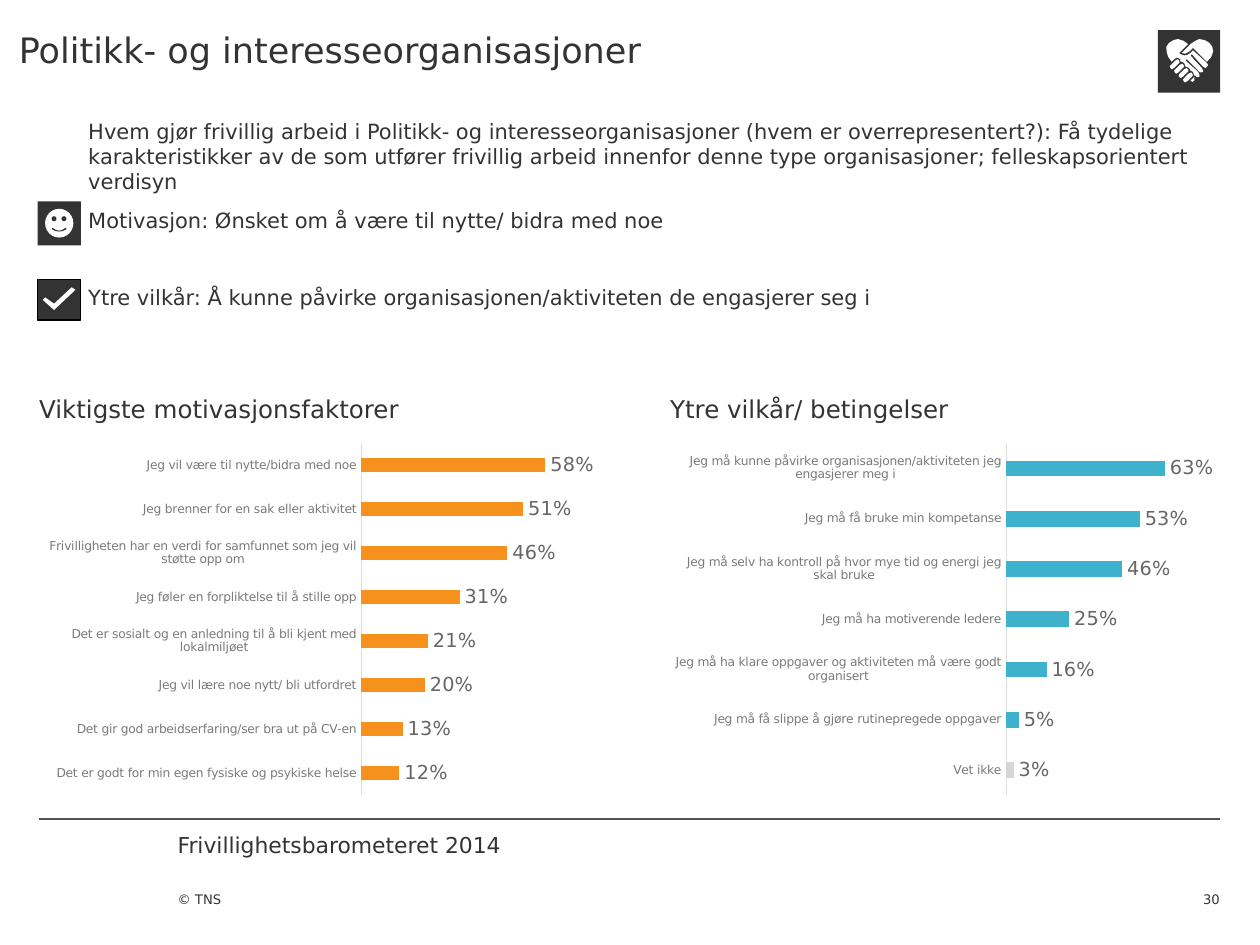
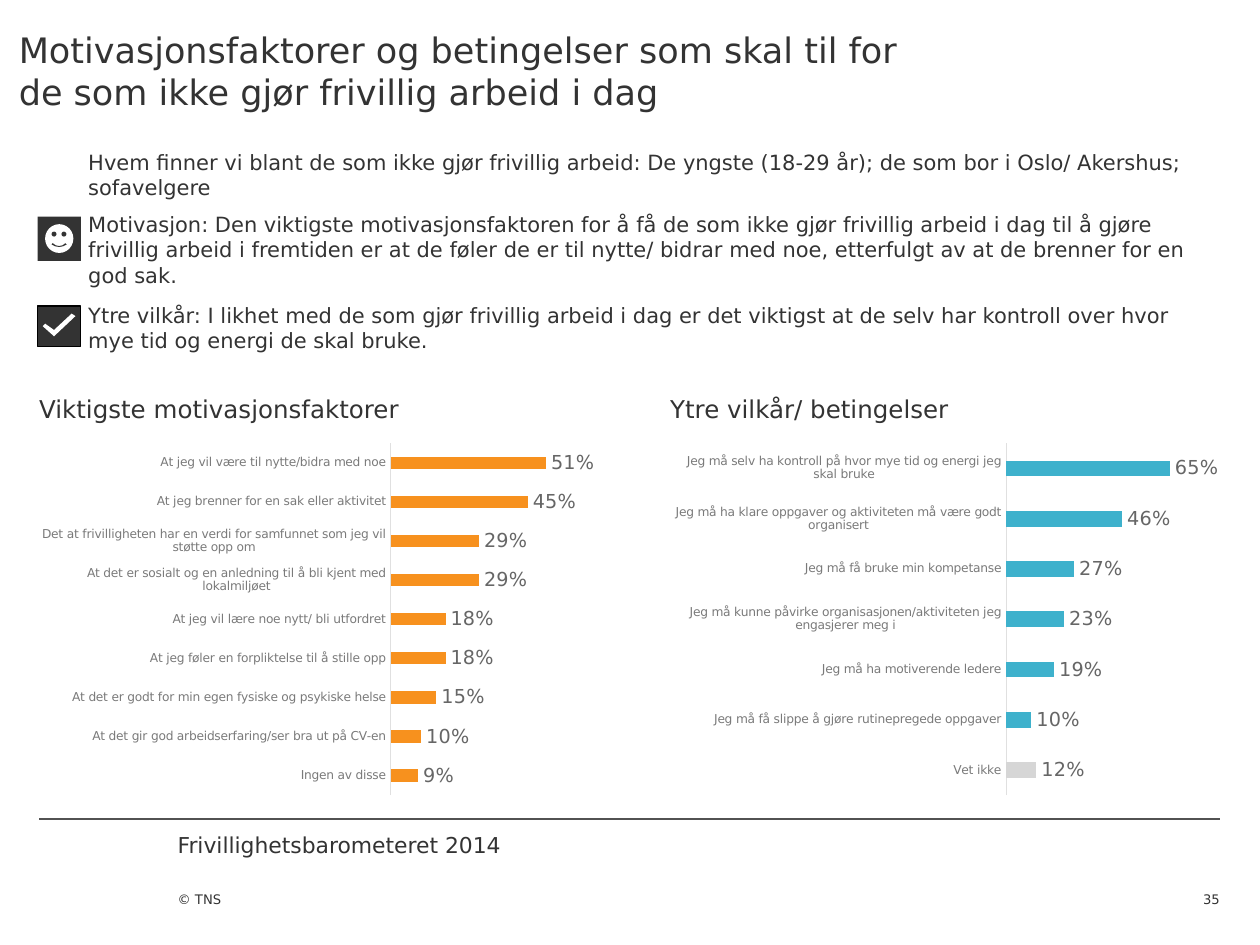
from lxml import etree
from pptx import Presentation
from pptx import util as u
from pptx.chart.data import CategoryChartData
from pptx.dml.color import RGBColor
from pptx.enum import chart as ch, shapes, text
from pptx.oxml import ns

Cm, Pt = u.Cm, u.Pt
FONT = "DejaVu Sans"
HUES = {"ink": "333333", "rule": "525252", "axis": "E0E0E0", "tick": "7A7A7A",
        "label": "666666", "orange": "F7911E", "teal": "3EB1CC",
        "grey": "D6D6D6", "white": "FFFFFF", "black": "000000"}

# Wording shared by several charts
POWER = "Jeg må kunne påvirke organisasjonen/aktiviteten jeg engasjerer meg i"
SKILL = "Jeg må få bruke min kompetanse"
HOLD = "Jeg må selv ha kontroll på hvor mye tid og energi jeg skal bruke"
LEAD = "Jeg må ha motiverende ledere"
TASKS = "Jeg må ha klare oppgaver og aktiviteten må være godt organisert"
DULL = "Jeg må få slippe å gjøre rutinepregede oppgaver"
NONE = "Vet ikke"

HEADS = ["Viktigste motivasjonsfaktorer", "Ytre vilkår/ betingelser"]
SLIDES = [
    {"title": "Politikk- og interesseorganisasjoner",
     "page": "30", "hands": True, "smile": 4.06, "check": 5.64,
     "notes": [
         (2.39, "Hvem gjør frivillig arbeid i Politikk- og interesseorganisasjoner "
                "(hvem er overrepresentert?): Få tydelige karakteristikker av de som "
                "utfører frivillig arbeid innenfor denne type organisasjoner; "
                "felleskapsorientert verdisyn"),
         (4.19, "Motivasjon: Ønsket om å være til nytte/ bidra med noe"),
         (5.74, "Ytre vilkår: Å kunne påvirke organisasjonen/aktiviteten de "
                "engasjerer seg i")],
     "motives": {"max": 0.7, "plot": (0.58, 0.4), "bars": [
         ("Jeg vil være til nytte/bidra med noe", 0.58),
         ("Jeg brenner for en sak eller aktivitet", 0.51),
         ("Frivilligheten har en verdi for samfunnet som jeg vil støtte opp om", 0.46),
         ("Jeg føler en forpliktelse til å stille opp", 0.31),
         ("Det er sosialt og en anledning til å bli kjent med lokalmiljøet", 0.21),
         ("Jeg vil lære noe nytt/ bli utfordret", 0.2),
         ("Det gir god arbeidserfaring/ser bra ut på CV-en", 0.13),
         ("Det er godt for min egen fysiske og psykiske helse", 0.12)]},
     "terms": [(POWER, 0.63), (SKILL, 0.53), (HOLD, 0.46), (LEAD, 0.25),
               (TASKS, 0.16), (DULL, 0.05), (NONE, 0.03)]},
    {"title": "Motivasjonsfaktorer og betingelser som skal til for\v"
              "de som ikke gjør frivillig arbeid i dag",
     "page": "35", "hands": False, "smile": 4.37, "check": 6.17,
     "notes": [
         (3.02, "Hvem finner vi blant de som ikke gjør frivillig arbeid: De yngste "
                "(18-29 år); de som bor i Oslo/ Akershus; sofavelgere"),
         (4.27, "Motivasjon: Den viktigste motivasjonsfaktoren for å få de som ikke "
                "gjør frivillig arbeid i dag til å gjøre frivillig arbeid i fremtiden "
                "er at de føler de er til nytte/ bidrar med noe, etterfulgt av at de "
                "brenner for en god sak."),
         (6.1, "Ytre vilkår: I likhet med de som gjør frivillig arbeid i dag er det "
               "viktigst at de selv har kontroll over hvor mye tid og energi de skal "
               "bruke.")],
     "motives": {"max": 0.6, "plot": (0.635, 0.33), "bars": [
         ("At jeg vil være til nytte/bidra med noe", 0.51),
         ("At jeg brenner for en sak eller aktivitet", 0.45),
         ("Det at frivilligheten har en verdi for samfunnet som jeg vil støtte opp om",
          0.29),
         ("At det er sosialt og en anledning til å bli kjent med lokalmiljøet", 0.29),
         ("At jeg vil lære noe nytt/ bli utfordret", 0.18),
         ("At jeg føler en forpliktelse til å stille opp", 0.18),
         ("At det er godt for min egen fysiske og psykiske helse", 0.15),
         ("At det gir god arbeidserfaring/ser bra ut på CV-en", 0.1),
         ("Ingen av disse", 0.09)]},
     "terms": [(HOLD, 0.65), (TASKS, 0.46), (SKILL, 0.27), (POWER, 0.23),
               (LEAD, 0.19), (DULL, 0.1), (NONE, 0.12)]},
]

# Icon outlines in hundredths of an inch from the tile corner
CHECK = [(27, 6), (13, 19), (6, 14), (4, 16), (13, 24), (30, 8)]
MOUTH = [(11, 22), (12, 21), (14.3, 22.7), (17, 23.3), (19.7, 22.7), (22, 21),
         (23, 22), (20.2, 23.5), (17, 24), (13.8, 23.5)]
FINGER = [(23, 34), (24.4, 32.5), (24, 31), (23, 30), (21, 31), (18, 34),
          (16.6, 35.5), (17, 37), (18, 38), (20, 37)]
RIGHT = [(44, 17), (42.4, 21.4), (39, 25), (28, 14), (25, 17), (21.8, 18.7),
         (19, 18), (26, 11), (29.6, 8.6), (33, 7), (37.4, 7.9), (41, 10),
         (43.3, 13.1)]
LEFT = [(28, 16), (26, 18), (23.5, 19.7), (21, 20), (18, 19), (17, 18), (24, 11),
        (20.4, 8.4), (16, 7), (12.4, 7.9), (9, 10), (6.9, 13), (7, 17), (8.2, 21),
        (11, 25), (13, 23), (14.4, 22.1), (16, 22), (18, 23), (18, 25), (19, 25),
        (21, 26), (22, 29), (23, 29), (25, 30), (26, 32), (28, 33), (29, 36),
        (30, 36), (31, 37.3), (33, 37), (33, 35), (32, 33), (22, 24), (23, 23),
        (33, 33), (34.5, 33.6), (36, 33), (36, 32), (35, 30), (26, 20), (27, 19),
        (36, 29), (38, 30), (39, 29), (40, 28), (39, 26)]
TIP = [(28, 38), (26, 40), (27.5, 41), (29, 40), (29, 39), (29, 37)]
HANDS = [RIGHT, LEFT, TIP] + [[(x + d, y + d) for x, y in FINGER]
                              for d in (-7, -3.5, 0, 3.5)]


def hue(name):
    return RGBColor.from_string(HUES[name])


def style(font, size, color="ink"):
    for key, val in {"name": FONT, "size": Pt(size), "bold": False}.items():
        setattr(font, key, val)
    font.color.rgb = hue(color)


def write(page, words, box, size, inset=0, **form):
    frame = page.shapes.add_textbox(*map(Cm, box)).text_frame
    base = {"word_wrap": True, "margin_left": 0, "margin_right": 0,
            "margin_top": Cm(inset), "margin_bottom": 0,
            "vertical_anchor": form.get("anchor", text.MSO_ANCHOR.TOP)}
    for key, val in base.items():
        setattr(frame, key, val)
    para = frame.paragraphs[0]
    para.text = words
    para.alignment = form.get("align", text.PP_ALIGN.LEFT)
    for run in para.runs:
        style(run.font, size)


def paint(shape, fill, edge=None):
    shape.shadow.inherit = False
    shape.fill.solid()
    shape.fill.fore_color.rgb = hue(fill)
    if edge:
        shape.line.color.rgb = hue(edge)
        shape.line.width = Pt(0.75)
    else:
        shape.line.fill.background()


def put(page, kind, box, fill, edge=None):
    paint(page.shapes.add_shape(kind, *map(Cm, box)), fill, edge)


def trace(page, loops, left, top, fill):
    """Draw closed outlines as one shape, placed from the tile corner."""
    fine = [[(x * 10, y * 10) for x, y in loop] for loop in loops]
    pen = page.shapes.build_freeform(*fine[0][0], scale=Cm(2.54) / 1000)
    for n, loop in enumerate(fine):
        if n:
            pen.move_to(*loop[0])
        pen.add_line_segments(loop[1:], close=True)
    paint(pen.convert_to_shape(Cm(left), Cm(top)), fill)


def smile(page, left, top):
    oval = shapes.MSO_SHAPE.OVAL
    put(page, shapes.MSO_SHAPE.RECTANGLE, (left, top, 0.87, 0.89), "ink")
    put(page, oval, (left + 0.15, top + 0.15, 0.57, 0.58), "white")
    for x in (0.28, 0.48):
        put(page, oval, (left + x, top + 0.3, 0.1, 0.1), "ink")
    trace(page, [MOUTH], left, top, "ink")


def check(page, left, top):
    put(page, shapes.MSO_SHAPE.RECTANGLE, (left, top, 0.87, 0.81), "ink", "black")
    trace(page, [CHECK], left, top, "white")


def hands(page, left, top):
    put(page, shapes.MSO_SHAPE.RECTANGLE, (left, top, 1.26, 1.26), "ink")
    trace(page, HANDS, left, top, "white")


def place(chart, left, width):
    """Fix the inner plot area, in shares of the chart frame."""
    area = chart._chartSpace.chart.plotArea
    for old in area.findall(ns.qn("c:layout")):
        area.remove(old)
    layout = etree.Element(ns.qn("c:layout"))
    manual = etree.SubElement(layout, ns.qn("c:manualLayout"))
    for tag, val in [("layoutTarget", "inner"), ("xMode", "edge"), ("yMode", "edge"),
                     ("x", left), ("y", 0.02), ("w", width), ("h", 0.96)]:
        etree.SubElement(manual, ns.qn("c:" + tag)).set("val", str(val))
    area.insert(0, layout)


def bars(page, rows, left, top, color, plot, grey=False):
    rows = rows[::-1]
    data = CategoryChartData(number_format="0%")
    data.categories = [name for name, _ in rows]
    data.add_series("Series 1", [val for _, val in rows])
    chart = page.shapes.add_chart(ch.XL_CHART_TYPE.BAR_CLUSTERED, Cm(left), Cm(8.79),
                                  Cm(11.2), Cm(7.39), data).chart
    chart.has_legend = chart.has_title = False
    style(chart.font, 10)
    cat, val = chart.category_axis, chart.value_axis
    for key, item in {"major_tick_mark": ch.XL_TICK_MARK.NONE,
                      "has_major_gridlines": False}.items():
        setattr(cat, key, item)
    style(cat.tick_labels.font, 7, "tick")
    cat.format.line.color.rgb = hue("axis")
    cat.format.line.width = Pt(0.75)
    for key, item in {"minimum_scale": 0, "maximum_scale": top, "major_unit": 0.1,
                      "has_major_gridlines": False, "visible": False}.items():
        setattr(val, key, item)
    body = chart.plots[0]
    for key, item in {"gap_width": 219, "vary_by_categories": False,
                      "has_data_labels": True}.items():
        setattr(body, key, item)
    for key, item in {"show_value": True, "number_format": "0%",
                      "number_format_is_linked": False,
                      "position": ch.XL_LABEL_POSITION.OUTSIDE_END}.items():
        setattr(body.data_labels, key, item)
    style(body.data_labels.font, 11, "label")
    line = body.series[0]
    fills = [(line.format.fill, color)]
    if grey:
        fills.append((line.points[0].format.fill, "grey"))
    for fill, name in fills:
        fill.solid()
        fill.fore_color.rgb = hue(name)
    place(chart, *plot)


def frame(page, title, number):
    """Title, footer rule, footer texts and page number."""
    rule = page.shapes.add_connector(shapes.MSO_CONNECTOR.STRAIGHT, Cm(0.79),
                                     Cm(16.51), Cm(24.59), Cm(16.51))
    rule.line.color.rgb = hue("rule")
    rule.line.width = Pt(0.75)
    etree.SubElement(rule._element.spPr, ns.qn("a:effectLst"))
    low = text.MSO_ANCHOR.BOTTOM
    write(page, "Frivillighetsbarometeret 2014", (3.58, 16.76, 8.41, 1.07), 12.5)
    write(page, "© TNS", (3.58, 17.58, 7.06, 0.71), 7.5, anchor=low)
    write(page, number, (23.19, 17.58, 1.4, 0.71), 7.5, anchor=low,
          align=text.PP_ALIGN.RIGHT)
    write(page, title, (0.38, 0, 24.2, 2.87), 20, inset=0.58)


def main():
    deck = Presentation()
    deck.slide_width, deck.slide_height = Cm(25.4), Cm(19.05)
    for item in SLIDES:
        page = deck.slides.add_slide(deck.slide_layouts[6])
        frame(page, item["title"], item["page"])
        for left, head in zip((0.79, 13.51), HEADS):
            write(page, head, (left, 7.95, 11.2, 0.84), 14)
        motives = item["motives"]
        bars(page, motives["bars"], 0.79, motives["max"], "orange", motives["plot"])
        bars(page, item["terms"], 13.41, 0.8, "teal", (0.614, 0.363), grey=True)
        if item["hands"]:
            hands(page, 23.34, 0.61)
        smile(page, 0.76, item["smile"])
        check(page, 0.76, item["check"])
        for top, note in item["notes"]:
            write(page, note, (1.78, top, 22.73, 0.86), 12)
    deck.save("out.pptx")


if __name__ == "__main__":
    main()
